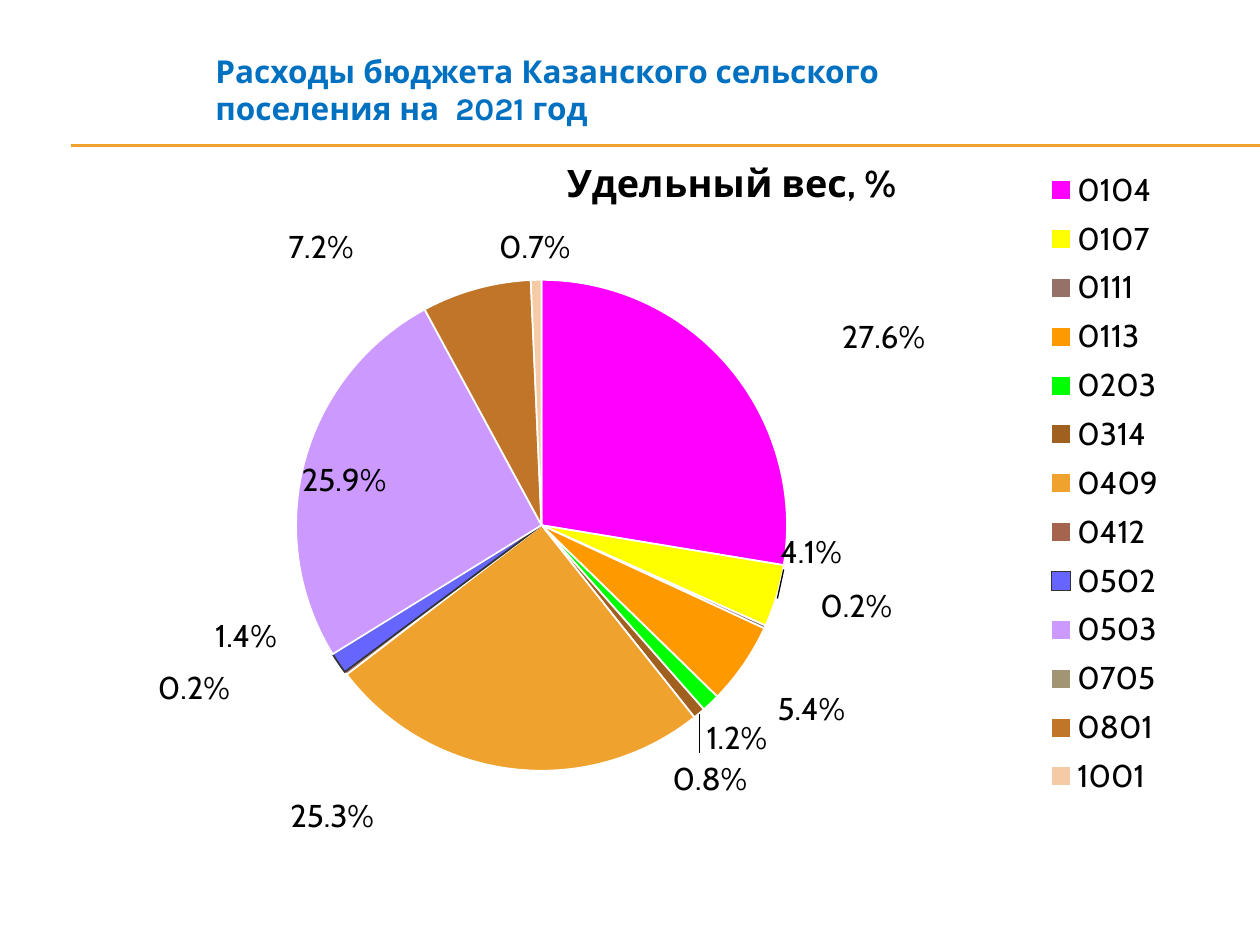
"""Build a slide with a pie chart of municipal budget spending shares."""
from math import copysign, cos, pi, sin

from lxml.etree import SubElement
from pptx import Presentation
from pptx.chart.data import CategoryChartData
from pptx.dml.color import RGBColor
from pptx.enum.chart import XL_CHART_TYPE, XL_LABEL_POSITION, XL_LEGEND_POSITION
from pptx.enum.shapes import MSO_CONNECTOR
from pptx.enum.text import MSO_ANCHOR, MSO_AUTO_SIZE, PP_ALIGN
from pptx.oxml.ns import qn
from pptx.util import Inches, Pt

TITLE = "Расходы бюджета Казанского сельского поселения на  2021 год"
CHART_TITLE = "Удельный вес, %"
SHARES = [
    ("0104", 0.276, "FF00FF", (6.97, 2.72)),
    ("0107", 0.041, "FFFF00", (6.47, 4.37)),
    ("0111", 0.002, "957168", (6.79, 4.79)),
    ("0113", 0.054, "FF9900", (6.46, 5.6)),
    ("0203", 0.012, "00FF00", (5.9, 5.82)),
    ("0314", 0.008, "A06020", (5.63, 6.14)),
    ("0409", 0.253, "F0A22E", (2.65, 6.48)),
    ("0412", 0.002, "A5644E", (1.54, 5.43)),
    ("0502", 0.014, "6666FF", (1.92, 5.02)),
    ("0503", 0.259, "CC99FF", (2.79, 3.83)),
    ("0705", 0, "A19574", None),
    ("0801", 0.072, "C17529", (2.49, 2.02)),
    ("1001", 0.007, "F5CBA5", (4.25, 2.02)),
]
RULES = [(0.56, y, 10, y) for y in (1.15, 1.16)]
LEADERS = [(6.22, 4.52, 6.17, 4.75), (5.55, 5.67, 5.55, 5.98)]
CHART = (0.31, 1.02, 9.19, 5.61)
PIE = (2.35, 2.22, 3.9, 3.9)
LEGEND = (8.17, 1.27, 1.2, 5.13)
HALF_LABEL = (0.33, 0.15)
THEME = {
    "title_font": "Karla", "chart_font": "Cabin",
    "title_size": 18, "chart_size": 18, "chart_title_size": 21.6,
    "title": "0070C0", "text": "000000", "rule": "F0A22E",
    "edge": "FFFFFF", "dark_edge": "333333",
}


def style_font(font, name, size, color, bold=False):
    font.name, font.size, font.bold = name, Pt(size), bold
    font.color.rgb = RGBColor.from_string(color)


def add_text(tf, text, font, size, color, bold=False):
    p = tf.paragraphs[0]
    r = p.add_run()
    r.text = text
    style_font(r.font, font, size, color, bold)
    return p


def add_line(slide, ends, color):
    line = slide.shapes.add_connector(MSO_CONNECTOR.STRAIGHT, *map(Inches, ends))
    line.line.color.rgb = RGBColor.from_string(color)
    line.line.width = Pt(0.75)
    SubElement(line._element.spPr, qn("a:effectLst"))


def set_layout(parent, index, **values):
    for old in parent.findall(qn("c:layout")):
        parent.remove(old)
    layout = SubElement(parent, qn("c:layout"))
    manual = SubElement(layout, qn("c:manualLayout"))
    for tag, value in values.items():
        SubElement(manual, qn(f"c:{tag}")).set("val", str(value))
    parent.insert(index, layout)


def place(parent, index, box, **extra):
    x, y, w, h = box
    left, top, width, height = CHART
    set_layout(parent, index, **extra, xMode="edge", yMode="edge",
               x=round((x - left) / width, 3), y=round((y - top) / height, 3),
               w=round(w / width, 3), h=round(h / height, 3))


def default_label_center(angle):
    radius = PIE[2] / 2
    center = PIE[0] + radius, PIE[1] + radius
    direction = sin(angle), -cos(angle)
    return [c + radius * d + (copysign(half, d) if abs(d) > 0.09 else 0)
            for c, d, half in zip(center, direction, HALF_LABEL)]


def add_labels(series):
    labels = series.data_labels
    labels.show_value = True
    labels.number_format, labels.number_format_is_linked = "0.0%", False
    total, start = sum(row[1] for row in SHARES), 0
    for i, (_, value, _, target) in enumerate(SHARES):
        angle = 2 * pi * (start + value / 2) / total
        start += value
        label = series.points[i].data_label
        label.position = XL_LABEL_POSITION.OUTSIDE_END
        d = series._element.xpath(f"c:dLbls/c:dLbl[c:idx/@val='{i}']")[0]
        if target is None:
            for child in d[1:]:
                d.remove(child)
            SubElement(d, qn("c:delete")).set("val", "1")
            continue
        style_font(label.font, THEME["chart_font"], THEME["chart_size"], THEME["text"])
        base = default_label_center(angle)
        dx, dy = [(t - b) / size for t, b, size in zip(target, base, CHART[2:])]
        set_layout(d, 1, x=round(dx, 3), y=round(dy, 3))
        fmt = SubElement(d, qn("c:numFmt"))
        fmt.set("formatCode", "0.0%")
        fmt.set("sourceLinked", "0")
        d.insert(2, fmt)
    for leader in series._element.xpath("c:dLbls/c:showLeaderLines"):
        leader.set("val", "0")


def add_pie(slide):
    data = CategoryChartData(number_format="0.0%")
    data.categories = [row[0] for row in SHARES]
    data.add_series("Series 1", [row[1] for row in SHARES])
    chart = slide.shapes.add_chart(XL_CHART_TYPE.PIE, *map(Inches, CHART), data).chart
    style_font(chart.font, THEME["chart_font"], THEME["chart_size"], THEME["text"])

    chart.has_title = True
    add_text(chart.chart_title.text_frame, CHART_TITLE, THEME["chart_font"],
             THEME["chart_title_size"], THEME["text"], bold=True)
    set_layout(chart.chart_title._element, 1, xMode="edge", yMode="edge", x=0.45, y=0.03)

    chart.has_legend = True
    chart.legend.position = XL_LEGEND_POSITION.RIGHT
    chart.legend.include_in_layout = False
    place(chart.legend._element, 1, LEGEND)
    place(chart._chartSpace.chart.plotArea, 0, PIE, layoutTarget="inner")

    plot = chart.plots[0]
    plot.vary_by_categories = True
    series = plot.series[0]
    for i, (name, _, color, _) in enumerate(SHARES):
        fmt = series.points[i].format
        fmt.fill.solid()
        fmt.fill.fore_color.rgb = RGBColor.from_string(color)
        edge = THEME["dark_edge" if name == "0502" else "edge"]
        fmt.line.color.rgb = RGBColor.from_string(edge)
        fmt.line.width = Pt(1)
    add_labels(series)


def main():
    prs = Presentation()
    prs.slide_width, prs.slide_height = Inches(10), Inches(7.5)
    slide = prs.slides.add_slide(prs.slide_layouts[5])
    for ends in RULES:
        add_line(slide, ends, THEME["rule"])
    add_pie(slide)
    for ends in LEADERS:
        add_line(slide, ends, THEME["text"])

    sp = slide.shapes.title
    sp.left, sp.top, sp.width, sp.height = map(Inches, (1.61, 0.36, 5.86, 0.71))
    tf = sp.text_frame
    tf.word_wrap, tf.auto_size = True, MSO_AUTO_SIZE.NONE
    tf.vertical_anchor = MSO_ANCHOR.TOP
    p = add_text(tf, TITLE, THEME["title_font"], THEME["title_size"],
                 THEME["title"], bold=True)
    p.alignment = PP_ALIGN.LEFT
    prs.save("out.pptx")


if __name__ == "__main__":
    main()
